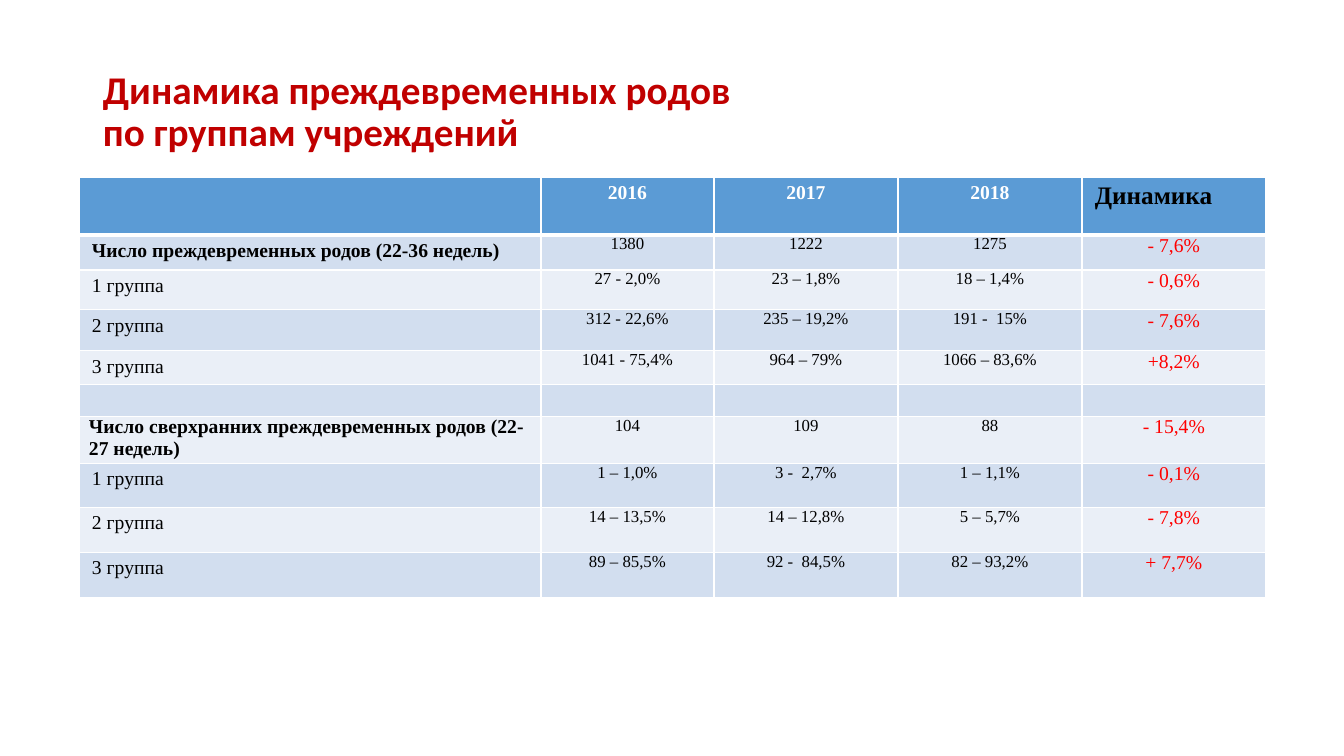
import pptx
import pptx.dml.color
import pptx.enum.text
import pptx.oxml.ns
import pptx.util
from lxml import etree

PX = 914400 / 100.8
COLORS = {
    "title": "C00000", "header": "5B9BD5", "dark_band": "D2DEEF", "light_band": "EAEFF7",
    "white": "FFFFFF", "black": "000000", "change": "FF0000",
}
ALIGN = pptx.enum.text.PP_ALIGN
COLUMN_WIDTHS = [462, 173, 184, 184, 184]
ROW_HEIGHTS = [58, 35, 40, 41, 33, 32, 45, 44, 45, 45]
ROWS = [
    ["", "2016", "2017", "2018", "Динамика"],
    ["Число преждевременных родов (22-36 недель)", "1380", "1222", "1275", "- 7,6%"],
    ["1 группа", "27 - 2,0%", "23 – 1,8%", "18 – 1,4%", "- 0,6%"],
    ["2 группа", "312 - 22,6%", "235 – 19,2%", "191 -  15%", "- 7,6%"],
    ["3 группа", "1041 - 75,4%", "964 – 79%", "1066 – 83,6%", "+8,2%"],
    [""] * 5,
    ["Число сверхранних преждевременных родов (22-27 недель)", "104", "109", "88", "- 15,4%"],
    ["1 группа", "1 – 1,0%", "3 -  2,7%", "1 – 1,1%", "- 0,1%"],
    ["2 группа", "14 – 13,5%", "14 – 12,8%", "5 – 5,7%", "- 7,8%"],
    ["3 группа", "89 – 85,5%", "92 -  84,5%", "82 – 93,2%", "+ 7,7%"],
]
SECTION_ROWS = (1, 6)
EXTREME_ROW = 6


def emu(pixels):
    """Turn px into EMU."""
    return pptx.util.Emu(round(pixels * PX))


def rgb(name):
    """Return a named colour."""
    return pptx.dml.color.RGBColor.from_string(COLORS[name])


def set_values(target, values):
    """Set attributes from a dict of format values."""
    for name, value in values.items():
        setattr(target, name, value)


def style_font(font, typeface, size, color, bold):
    """Set the look of a font."""
    set_values(font, {"name": typeface, "size": pptx.util.Pt(size), "bold": bold})
    font.color.rgb = rgb(color)


def add_title(slide, left, top, width, height):
    """Place the two-line heading in its box."""
    frame = slide.shapes.add_textbox(emu(left), emu(top), emu(width), emu(height)).text_frame
    set_values(frame, {"word_wrap": True, "vertical_anchor": pptx.enum.text.MSO_ANCHOR.MIDDLE})
    paragraph = frame.paragraphs[0]
    paragraph.text = "Динамика преждевременных родов\vпо группам учреждений"
    paragraph.line_spacing = 0.9
    for run in paragraph.runs:
        style_font(run.font, "Calibri", 28, "title", True)


def cell_format(row, column):
    """Return the size, colour, weight and alignment of a cell."""
    if row == 0:
        return (18, "black", True, ALIGN.LEFT) if column == 4 else (14, "white", True, ALIGN.CENTER)
    if column == 0:
        return 14, "black", row in SECTION_ROWS, ALIGN.LEFT
    if column == 4:
        return 14, "change", False, ALIGN.CENTER
    return 12, "black", False, ALIGN.CENTER


def add_borders(cell, row):
    """Draw white cell borders, thicker under the header."""
    properties = cell._tc.get_or_add_tcPr()
    for side in "LRTB":
        points = 3 if (row, side) in ((0, "B"), (1, "T")) else 1
        line = etree.SubElement(properties, pptx.oxml.ns.qn(f"a:ln{side}"), w=str(pptx.util.Pt(points)))
        fill = etree.SubElement(line, pptx.oxml.ns.qn("a:solidFill"))
        etree.SubElement(fill, pptx.oxml.ns.qn("a:srgbClr"), val=COLORS["white"])


def fill_cell(cell, row, column, text):
    """Format one table cell and write its text."""
    roomy = row == 0 or (column == 0 and text and row != EXTREME_ROW)
    side, edge = (emu(13), emu(5)) if roomy else (emu(10), emu(0))
    set_values(cell, {"margin_left": side, "margin_right": side,
                      "margin_top": edge, "margin_bottom": edge})
    add_borders(cell, row)
    cell.fill.solid()
    cell.fill.fore_color.rgb = rgb("header" if row == 0 else "dark_band" if row % 2 else "light_band")
    if text:
        size, color, bold, alignment = cell_format(row, column)
        paragraph = cell.text_frame.paragraphs[0]
        paragraph.alignment = alignment
        run = paragraph.add_run()
        run.text = text
        style_font(run.font, "Times New Roman", size, color, bold)


def add_births_table(slide, left, top):
    """Place the table of births by group and year."""
    table = slide.shapes.add_table(
        len(ROWS), len(COLUMN_WIDTHS), emu(left), emu(top),
        emu(sum(COLUMN_WIDTHS)), emu(sum(ROW_HEIGHTS))).table
    set_values(table, {"first_row": False, "horz_banding": False})
    for column, width in zip(table.columns, COLUMN_WIDTHS):
        column.width = emu(width)
    for row, (height, texts) in enumerate(zip(ROW_HEIGHTS, ROWS)):
        table.rows[row].height = emu(height)
        for column, text in enumerate(texts):
            fill_cell(table.cell(row, column), row, column, text)


def main():
    """Build and save the slide."""
    presentation = pptx.Presentation()
    set_values(presentation, {"slide_width": emu(1344), "slide_height": emu(756)})
    slide = presentation.slides.add_slide(presentation.slide_layouts[6])
    add_title(slide, 93, 40, 1159, 146)
    add_births_table(slide, 79, 177)
    presentation.save("out.pptx")


if __name__ == "__main__":
    main()
